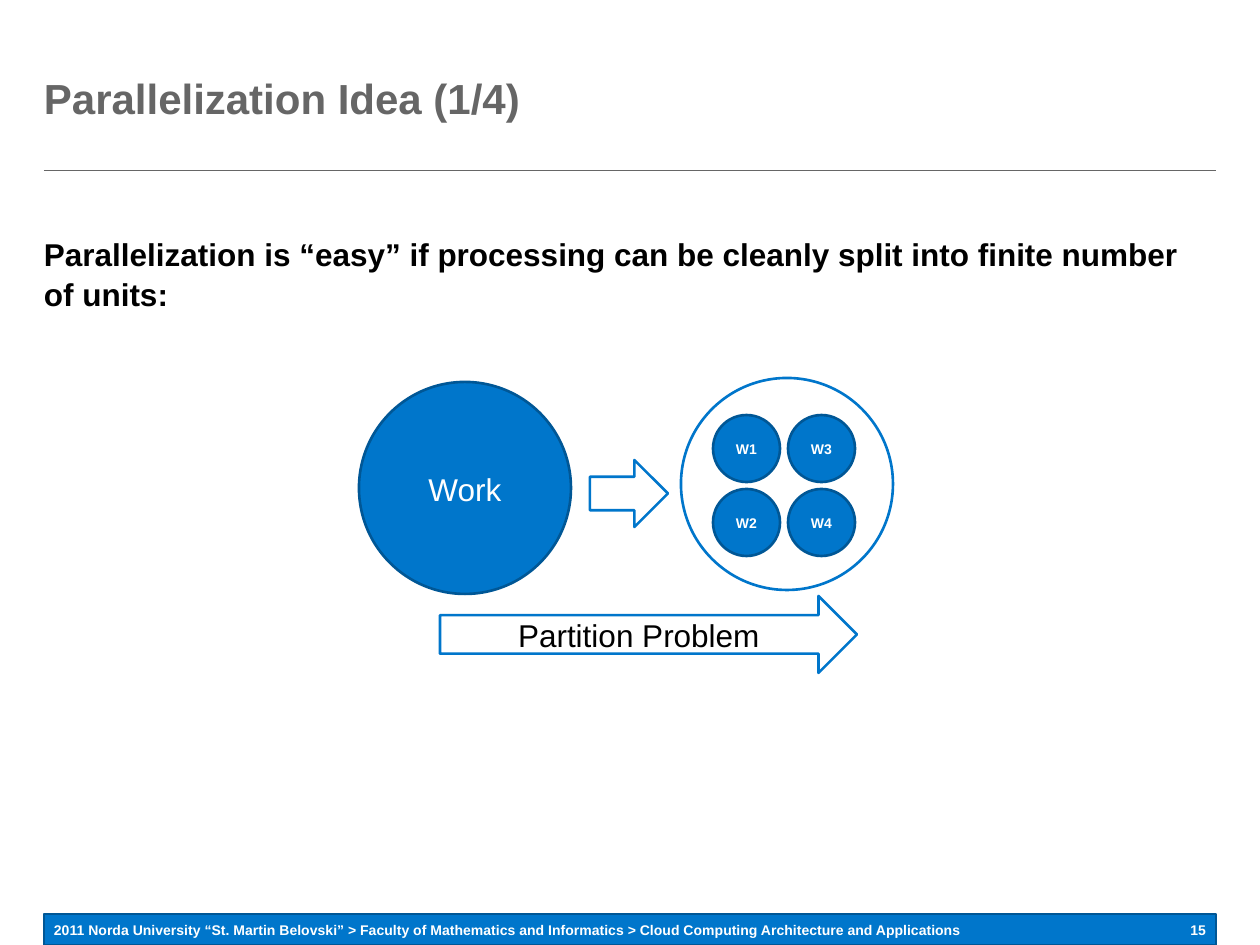
from pptx import Presentation
from pptx.dml.color import RGBColor
from pptx.enum.shapes import MSO_CONNECTOR, MSO_SHAPE
from pptx.enum.text import MSO_ANCHOR, PP_ALIGN
from pptx.oxml.ns import qn
from pptx.util import Pt
from lxml.etree import SubElement

PX = 914400 // 126
BLUE, NAVY, GRAY, WHITE, BLACK = "0076CB", "005796", "666666", "FFFFFF", "000000"
TITLE = "Parallelization Idea (1/4)"
STATEMENT = "Parallelization is “easy” if processing can be cleanly split into finite number of units:"
FOOTER = ("2011 Norda University “St. Martin Belovski” > Faculty of Mathematics and Informatics"
          " > Cloud Computing Architecture and Applications")
PAGE = "15"
UNITS = [["W1", "W3"], ["W2", "W4"]]
LEFT, WIDTH = 44, 1172
UNIT_LEFT, UNIT_TOP, UNIT_SIZE = 713, 415, 67
UNIT_STEP_X, UNIT_STEP_Y = 75, 74


def color(value):
    return RGBColor.from_string(value)


def px(*lengths):
    return [length * PX for length in lengths]


def write(shape, text, size=18, ink=BLACK, bold=False, align=PP_ALIGN.LEFT,
          anchor=MSO_ANCHOR.TOP, insets=(0, 0, 0, 0), wrap=True, spacing=1.05):
    frame = shape.text_frame
    frame.word_wrap = wrap
    frame.vertical_anchor = anchor
    (frame.margin_left, frame.margin_top,
     frame.margin_right, frame.margin_bottom) = px(*insets)
    paragraph = frame.paragraphs[0]
    paragraph.alignment = align
    paragraph.line_spacing = spacing
    run = paragraph.add_run()
    run.text = text
    run.font.name = "Arial"
    run.font.size = Pt(size)
    run.font.bold = bold
    run.font.color.rgb = color(ink)


def draw(shapes, kind, box, fill, line, text="", **style):
    shape = shapes.add_shape(kind, *px(*box))
    shape.shadow.inherit = False
    shape.fill.solid()
    shape.fill.fore_color.rgb = color(fill)
    shape.line.color.rgb = color(line)
    shape.line.width = Pt(1.5)
    if text:
        write(shape, text, align=PP_ALIGN.CENTER, anchor=MSO_ANCHOR.MIDDLE,
              insets=(13, 10, 13, 10), **style)


def label(shapes, box, text, **style):
    write(shapes.add_textbox(*px(*box)), text, **style)


def main():
    deck = Presentation()
    deck.slide_width, deck.slide_height = px(1260, 945)
    shapes = deck.slides.add_slide(deck.slide_layouts[6]).shapes

    rule = shapes.add_connector(MSO_CONNECTOR.STRAIGHT, *px(LEFT, 170, LEFT + WIDTH, 170))
    rule.line.color.rgb = color(GRAY)
    rule.line.width = Pt(0.5)
    SubElement(rule._element.spPr, qn("a:effectLst"))

    draw(shapes, MSO_SHAPE.RECTANGLE, (LEFT, 914, WIDTH, 31), BLUE, NAVY)
    footer_style = dict(size=8, ink=WHITE, bold=True, wrap=False, spacing=1)
    label(shapes, (LEFT, 922, 932, 16), FOOTER, insets=(10, 0, 0, 0), **footer_style)
    label(shapes, (1188, 922, 28, 16), PAGE, insets=(0, 0, 10, 0),
          align=PP_ALIGN.RIGHT, **footer_style)

    label(shapes, (LEFT, 44, WIDTH, 105), TITLE, size=24, ink=GRAY, bold=True,
          anchor=MSO_ANCHOR.MIDDLE)
    label(shapes, (LEFT, 233, WIDTH, 161), STATEMENT, bold=True)

    draw(shapes, MSO_SHAPE.OVAL, (359, 382, 212, 212), BLUE, NAVY, "Work", ink=WHITE)
    draw(shapes, MSO_SHAPE.RIGHT_ARROW, (590, 460, 78, 67), WHITE, BLUE)

    partition = shapes.add_group_shape().shapes
    draw(partition, MSO_SHAPE.OVAL, (681, 378, 212, 212), WHITE, BLUE)
    for row, names in enumerate(UNITS):
        for column, name in enumerate(names):
            box = (UNIT_LEFT + column * UNIT_STEP_X, UNIT_TOP + row * UNIT_STEP_Y,
                   UNIT_SIZE, UNIT_SIZE)
            draw(partition, MSO_SHAPE.OVAL, box, BLUE, NAVY, name,
                 size=8, ink=WHITE, bold=True, wrap=False)

    draw(shapes, MSO_SHAPE.RIGHT_ARROW, (440, 596, 417, 77), WHITE, BLUE, "Partition Problem")
    deck.save("out.pptx")


if __name__ == "__main__":
    main()
